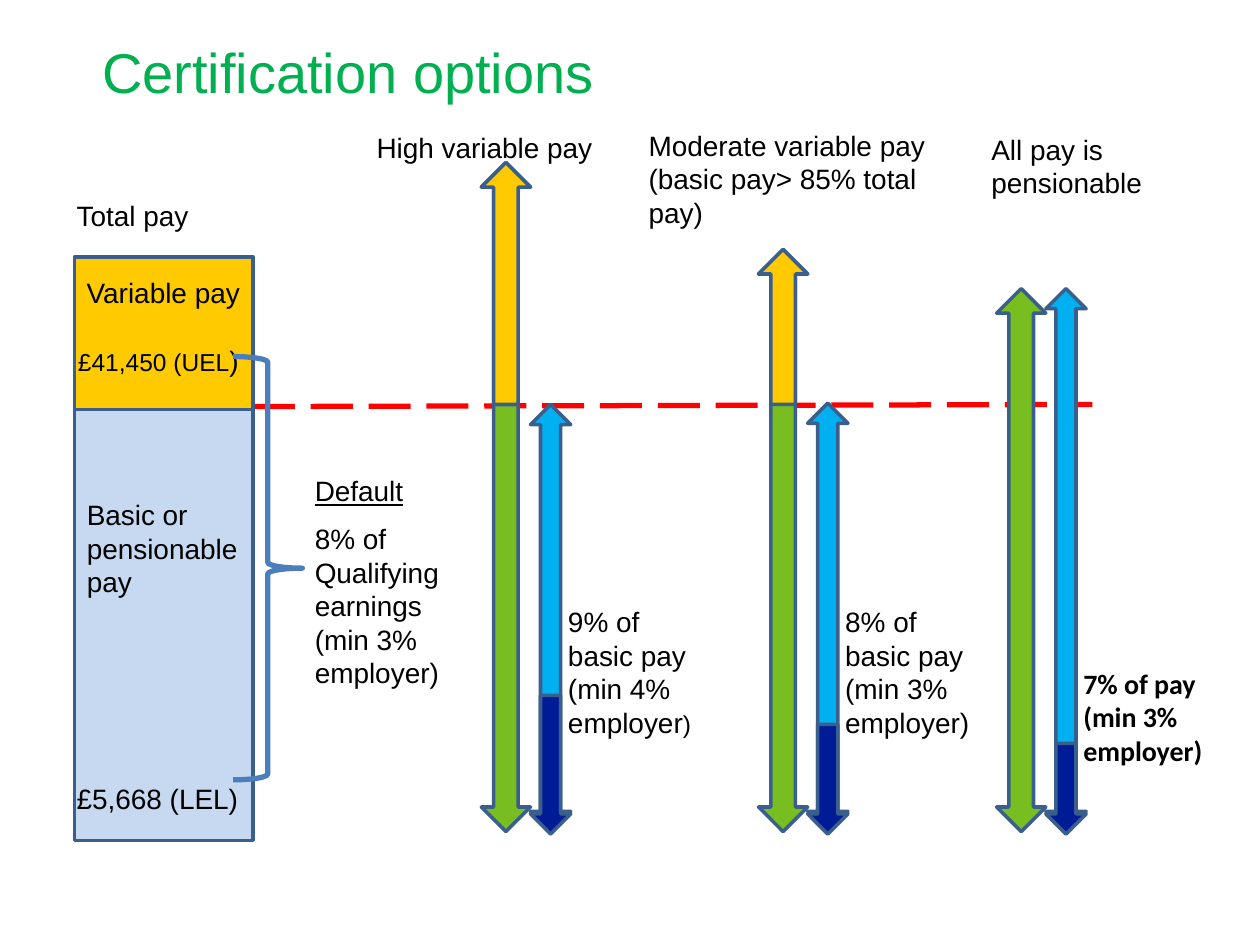
from dataclasses import dataclass

from lxml import etree
from pptx import Presentation
from pptx.dml.color import RGBColor
from pptx.enum.dml import MSO_LINE
from pptx.enum.shapes import MSO_CONNECTOR, MSO_SHAPE
from pptx.enum.text import MSO_ANCHOR, MSO_AUTO_SIZE, PP_ALIGN
from pptx.oxml.ns import qn
from pptx.util import Inches, Pt

RECTANGLE = MSO_SHAPE.RECTANGLE
UP_ARROW = MSO_SHAPE.UP_ARROW
DOWN_ARROW = MSO_SHAPE.DOWN_ARROW
UP_DOWN_ARROW = MSO_SHAPE.UP_DOWN_ARROW
RIGHT_BRACE = MSO_SHAPE.RIGHT_BRACE
STRAIGHT = MSO_CONNECTOR.STRAIGHT
LONG_DASH = MSO_LINE.LONG_DASH
TOP = MSO_ANCHOR.TOP
LEFT = PP_ALIGN.LEFT
NO_AUTOFIT = MSO_AUTO_SIZE.NONE

COLORS = {
    "title": "00B050", "text": "000000", "outline": "3A5F8C", "brace": "4B7EBC",
    "limit": "FF0000", "variable": "FFCB00", "basic": "C6D9F1",
    "pay": "78BE20", "contribution": "00B0F0", "employer": "001B96",
}
BASIC_TOP = 3.21      # level where basic pay meets variable pay
ARROW_BOTTOM = 6.6
PAY_WIDTH = 0.39
CONTRIBUTION_WIDTH = 0.32


@dataclass
class Option:
    left: float
    pay_top: float
    contribution_top: float
    employer_top: float
    heading: list
    heading_box: tuple    # offset from left, top, width, height
    note: list
    note_box: tuple       # top, width, height
    has_variable: bool = True
    font: str = "Arial"
    bold: bool = False


OPTIONS = [
    Option(3.82, 1.29, 3.21, 5.52, ["High variable pay"], (-0.93, 0.99, 1.94, 0.6),
           ["9% of", "basic pay", ["(min 4% employer", (")", 14)]],
           (4.75, 1.54, 1.18)),
    Option(6.02, 1.98, 3.2, 5.75,
           ["Moderate variable pay", "(basic pay> 85% total pay)"],
           (-0.97, 0.97, 2.56, 0.91),
           ["8% of", "basic pay", "(min 3% employer)"], (4.75, 1.56, 1.65)),
    Option(7.91, 2.29, 2.29, 5.9, ["All pay is pensionable"], (-0.14, 1, 1.84, 0.88),
           ["7% of pay", "(min 3% employer)"], (5.24, 1.5, 1.16),
           has_variable=False, font="Calibri", bold=True),
]


def color(name):
    return RGBColor.from_string(COLORS[name])


def add_text(slide, left, top, width, height, lines, size=16, font="Arial",
             bold=False, underline=False, wrap=True):
    """Each line is a string, or a list of a string and (string, size) pairs."""
    box = slide.shapes.add_textbox(Inches(left), Inches(top), Inches(width), Inches(height))
    frame = box.text_frame
    frame.word_wrap = wrap
    for index, line in enumerate(lines):
        paragraph = frame.paragraphs[0] if index == 0 else frame.add_paragraph()
        first, *others = [line] if isinstance(line, str) else line
        paragraph.add_run().text = first
        for text, run_size in others:
            run = paragraph.add_run()
            run.text = text
            run.font.size = Pt(run_size)
        paragraph.font.size = Pt(size)
        paragraph.font.name = font
        paragraph.font.bold = bold
        paragraph.font.underline = underline
        paragraph.font.color.rgb = color("text")


def add_shape(slide, kind, left, top, width, height, fill=None, line="outline", weight=2):
    shape = slide.shapes.add_shape(kind, Inches(left), Inches(top), Inches(width), Inches(height))
    shape.shadow.inherit = False
    if fill:
        shape.fill.solid()
        shape.fill.fore_color.rgb = color(fill)
    else:
        shape.fill.background()
    shape.line.color.rgb = color(line)
    shape.line.width = Pt(weight)


def add_title(slide, left, top, width, height):
    title = slide.shapes.title
    title.left, title.top = Inches(left), Inches(top)
    title.width, title.height = Inches(width), Inches(height)
    frame = title.text_frame
    frame.text = "Certification options"
    frame.auto_size = NO_AUTOFIT
    frame.vertical_anchor = TOP
    frame.margin_left = Inches(0.22)
    paragraph = frame.paragraphs[0]
    paragraph.alignment = LEFT
    paragraph.font.size = Pt(32)
    paragraph.font.name = "Arial"
    paragraph.font.color.rgb = color("title")


def add_limit_line(slide, left, top, right, bottom):
    line = slide.shapes.add_connector(STRAIGHT, Inches(left), Inches(top),
                                      Inches(right), Inches(bottom))
    line.line.color.rgb = color("limit")
    line.line.width = Pt(3)
    line.line.dash_style = LONG_DASH
    etree.SubElement(line._element.spPr, qn("a:effectLst"))


def add_option(slide, option):
    left = option.left
    contribution_left = left + PAY_WIDTH
    # Contribution, with the employer's part at its foot
    add_shape(slide, UP_DOWN_ARROW, contribution_left, option.contribution_top,
              CONTRIBUTION_WIDTH, ARROW_BOTTOM - option.contribution_top, "contribution")
    add_shape(slide, DOWN_ARROW, contribution_left, option.employer_top,
              CONTRIBUTION_WIDTH, ARROW_BOTTOM + 0.02 - option.employer_top, "employer")
    # Pay, with the variable part on top
    add_shape(slide, UP_DOWN_ARROW, left, option.pay_top,
              PAY_WIDTH, ARROW_BOTTOM - option.pay_top, "pay")
    if option.has_variable:
        add_shape(slide, UP_ARROW, left, option.pay_top,
                  PAY_WIDTH, BASIC_TOP - option.pay_top, "variable")
    # Heading and contribution note
    offset, *heading_place = option.heading_box
    add_text(slide, left + offset, *heading_place, option.heading)
    add_text(slide, left + 0.59, *option.note_box, option.note,
             font=option.font, bold=option.bold)


def add_total_pay(slide, left, top):
    # Stacked bar
    add_shape(slide, RECTANGLE, left, BASIC_TOP, 1.42, 3.46, "basic")
    add_shape(slide, RECTANGLE, left, top, 1.42, 1.21, "variable")
    # Bar labels
    add_text(slide, left - 0.08, top - 0.51, 1.62, 0.37, ["Total pay"])
    add_text(slide, left, top + 0.1, 1.54, 0.37, ["Variable pay"])
    add_text(slide, left - 0.07, top + 0.64, 1.9, 0.37, [["£41,450 (UEL", (")", 16)]], size=14)
    add_text(slide, left, top + 1.86, 1.59, 0.91, ["Basic or pensionable pay"])
    add_text(slide, left - 0.08, top + 4.11, 1.63, 0.37, ["£5,668 (LEL)"])
    # Qualifying earnings
    add_shape(slide, RIGHT_BRACE, left + 1.26, top + 0.79, 0.55, 3.36, line="brace", weight=3)
    add_text(slide, left + 1.81, top + 1.67, 0.98, 0.37, ["Default"],
             underline=True, wrap=False)
    add_text(slide, left + 1.81, top + 2.05, 1.2, 1.45,
             ["8% of", "Qualifying", "earnings", "(min 3%", "employer)"], wrap=False)


def main():
    presentation = Presentation()
    presentation.slide_width = Inches(10)
    presentation.slide_height = Inches(7.5)
    slide = presentation.slides.add_slide(presentation.slide_layouts[5])
    add_title(slide, 0.59, 0.25, 6.78, 0.64)
    add_limit_line(slide, 0.63, 3.23, 8.67, 3.21)
    for option in OPTIONS:
        add_option(slide, option)
    add_total_pay(slide, 0.59, 2.04)
    presentation.save("out.pptx")


if __name__ == "__main__":
    main()
